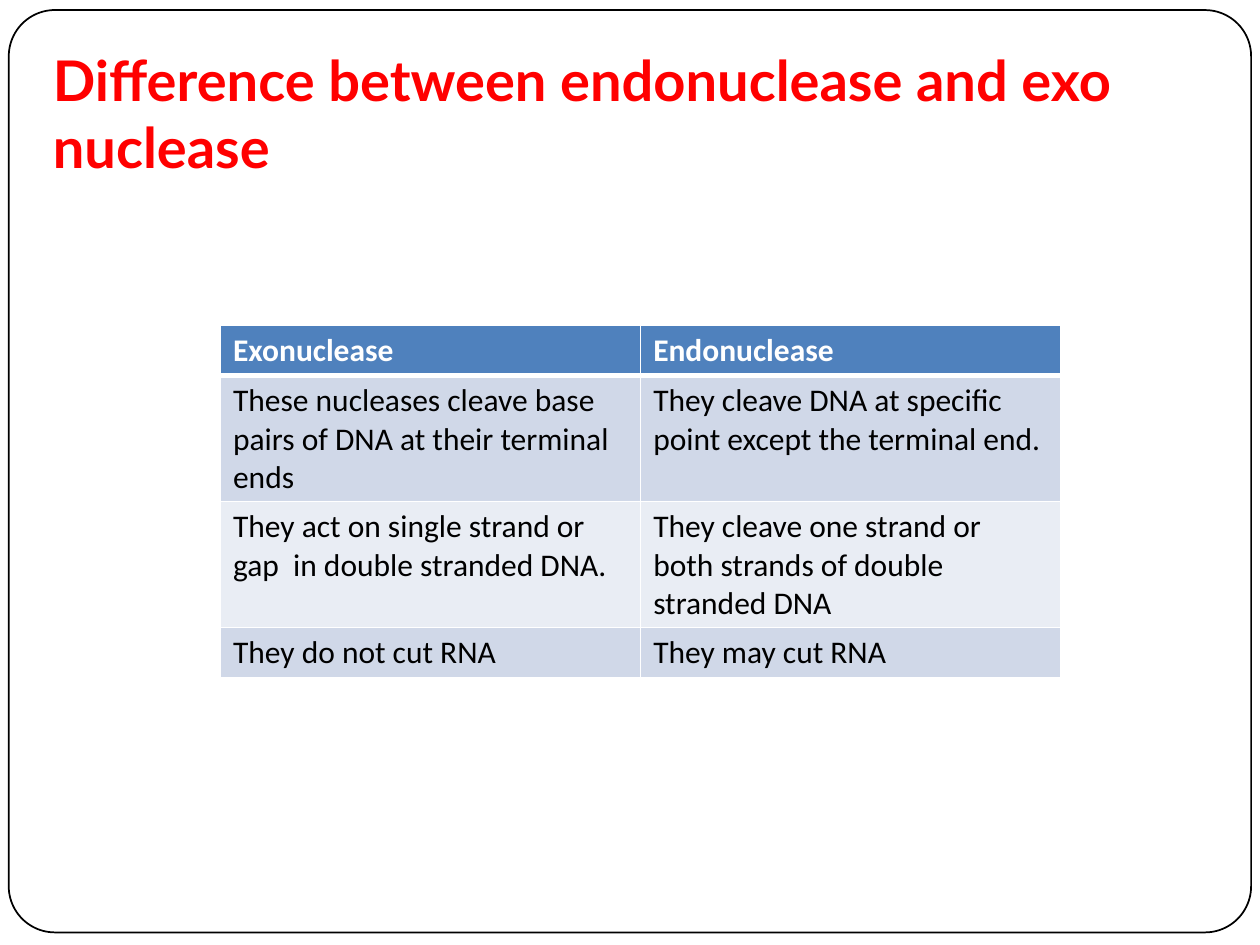
"""Build a slide comparing exonuclease and endonuclease in a table."""
from lxml.etree import SubElement
from pptx import Presentation
from pptx.dml.color import RGBColor
from pptx.enum.shapes import MSO_SHAPE
from pptx.oxml.ns import qn
from pptx.util import Inches, Pt

TITLE = "Difference between endonuclease and exo nuclease"
ROWS = [
    ("Exonuclease", "Endonuclease"),
    ("These nucleases cleave base pairs of DNA at their terminal ends",
     "They cleave DNA at specific point except the terminal end."),
    ("They act on single strand or gap  in double stranded DNA.",
     "They cleave one strand or both strands of double stranded DNA"),
    ("They do not cut RNA", "They may cut RNA"),
]
ROW_HEIGHTS = [0.4, 1, 1, 0.4]
COLORS = {"red": "FF0000", "black": "000000", "white": "FFFFFF",
          "header": "4F81BD", "odd": "D0D8E8", "even": "E9EDF4"}
TITLE_FONT = {"name": "Lato", "size": Pt(32), "bold": True}
HEADER_FONT = {"name": "Calibri", "size": Pt(18), "bold": True}
BODY_FONT = {**HEADER_FONT, "bold": False}


def rgb(name):
    return RGBColor.from_string(COLORS[name])


def write(tf, text, font, color):
    r = tf.paragraphs[0].add_run()
    r.text = text
    for key, value in font.items():
        setattr(r.font, key, value)
    r.font.color.rgb = rgb(color)


def add_borders(cell, bottom):
    tcPr = cell._tc.get_or_add_tcPr()
    for side, width in {"L": 1, "R": 1, "T": 1, "B": bottom}.items():
        ln = SubElement(tcPr, qn(f"a:ln{side}"), w=str(Pt(width)))
        fill = SubElement(ln, qn("a:solidFill"))
        SubElement(fill, qn("a:srgbClr"), val=COLORS["white"])


def add_frame(s):
    sp = s.shapes.add_shape(MSO_SHAPE.ROUNDED_RECTANGLE, Inches(0.07),
                            Inches(0.08), Inches(9.86), Inches(7.32))
    sp.adjustments[0] = 0.05
    sp.shadow.inherit = False
    sp.fill.background()
    sp.line.color.rgb = rgb("black")
    sp.line.width = Pt(1)


def add_title(s):
    tf = s.shapes.add_textbox(Inches(0.42), Inches(0.36),
                              Inches(9.16), Inches(1.08)).text_frame
    tf.word_wrap = True
    for side in ("left", "top", "right", "bottom"):
        setattr(tf, f"margin_{side}", 0)
    write(tf, TITLE, TITLE_FONT, "red")


def add_comparison(s):
    table = s.shapes.add_table(len(ROWS), len(ROWS[0]), Inches(1.75),
                               Inches(2.58), Inches(6.67),
                               Inches(sum(ROW_HEIGHTS))).table
    for i, (row, height) in enumerate(zip(ROWS, ROW_HEIGHTS)):
        table.rows[i].height = Inches(height)
        header = i == 0
        band = "header" if header else ("odd" if i % 2 else "even")
        for j, text in enumerate(row):
            cell = table.cell(i, j)
            add_borders(cell, 3 if header else 1)
            cell.fill.solid()
            cell.fill.fore_color.rgb = rgb(band)
            write(cell.text_frame, text, HEADER_FONT if header else BODY_FONT,
                  "white" if header else "black")


def main():
    prs = Presentation()
    prs.slide_width, prs.slide_height = Inches(10), Inches(7.5)
    s = prs.slides.add_slide(prs.slide_layouts[6])
    add_frame(s)
    add_title(s)
    add_comparison(s)
    prs.save("out.pptx")


if __name__ == "__main__":
    main()
